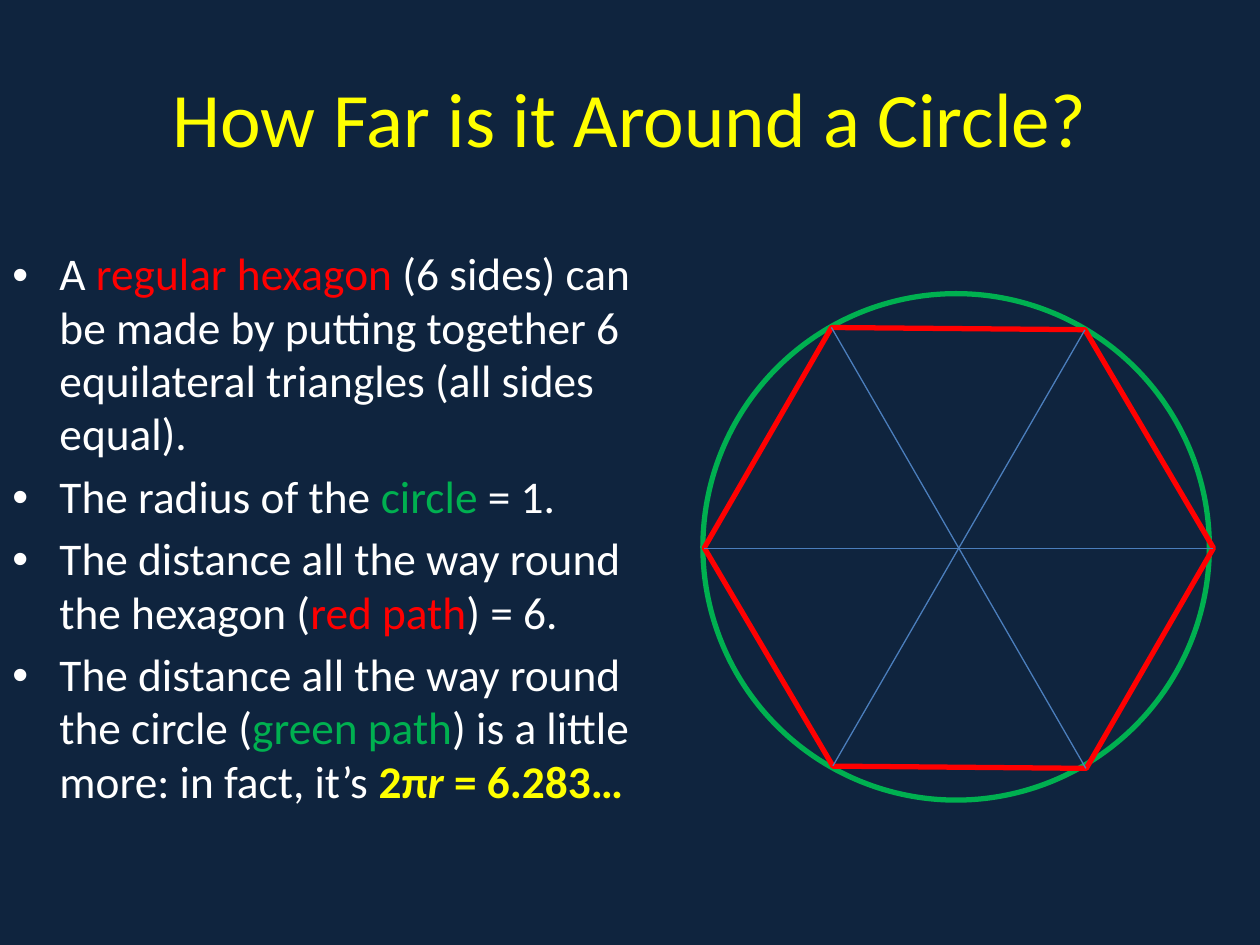
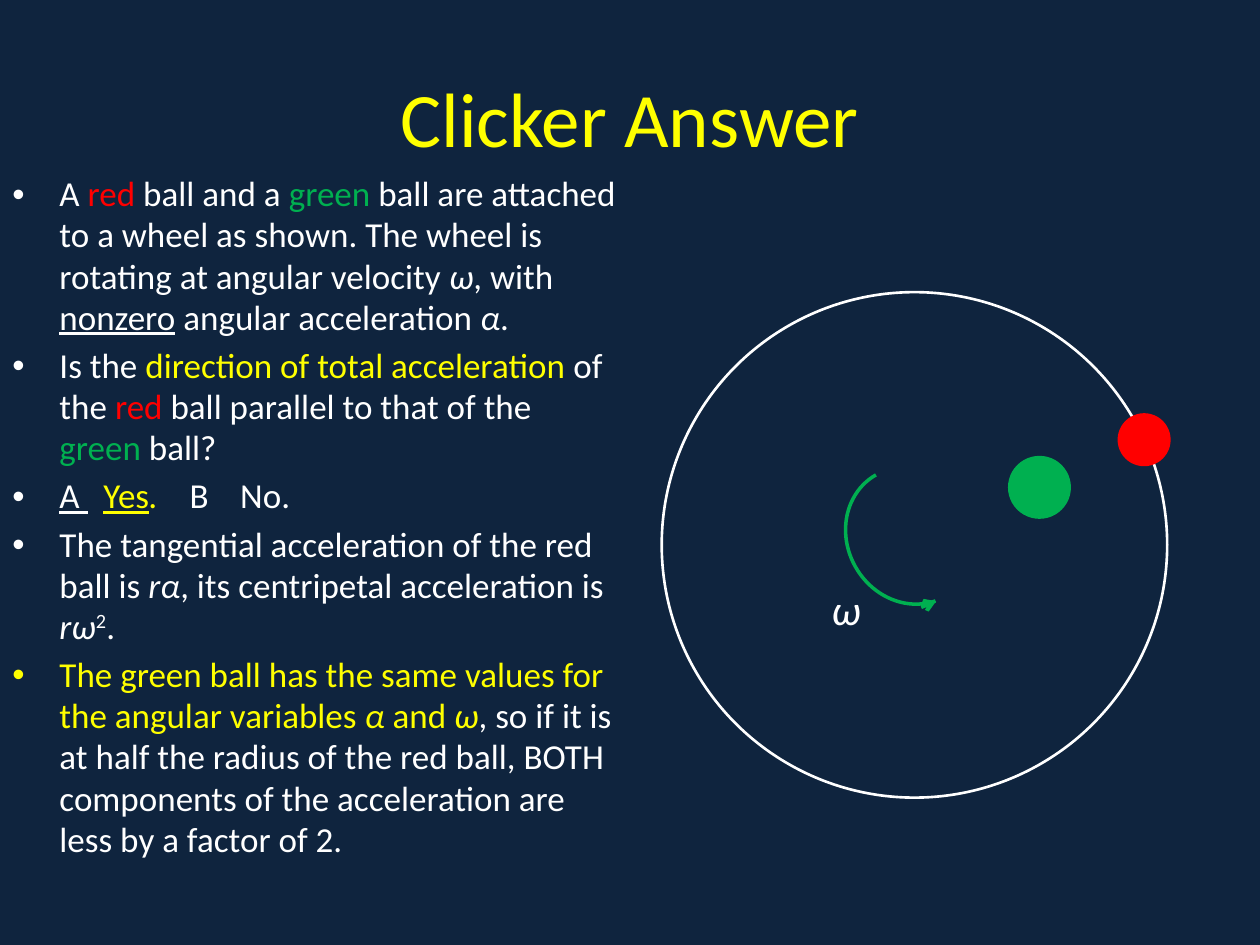
from lxml import etree
from pptx import Presentation, util as u
from pptx.dml.color import RGBColor
from pptx.enum import shapes, text
from pptx.oxml import ns

COLORS = {
    "night": "0F243E",
    "yellow": "FFFF00",
    "white": "FFFFFF",
    "red": "FF0000",
    "green": "00B050",
    "blue": "4B7EBC",
}
FONT = "Calibri"
FONT_STYLES = ("bold", "italic", "underline")
# Run attributes: raised text, and single spaces widened to a gap
RUN_ATTRIBUTES = {
    "super": {"baseline": "30000"},
    "gap": {"spc": "900"},
    "widegap": {"spc": "1350"},
}
BULLET_INDENT = u.Cm(0.95)

HEXAGON_POINTS = [
    [("A ", ""), ("regular hexagon ", "red"),
     ("(6 sides) can be made by putting together 6 equilateral triangles "
      "(all sides equal).", "")],
    [("The radius of the ", ""), ("circle", "green"), (" = 1.", "")],
    [("The distance all the way round the hexagon (", ""),
     ("red path", "red"), (") = 6.", "")],
    [("The distance all the way round the circle (", ""),
     ("green path", "green"), (") is a little more: in fact, it’s ", ""),
     ("2π", "yellow bold"), ("r", "yellow bold italic"),
     (" = 6.283…", "yellow bold")],
]

CLICKER_POINTS = [
    [("A ", ""), ("red", "red"), (" ball and a ", ""), ("green", "green"),
     (" ball are attached to a wheel as shown. The wheel is rotating at "
      "angular velocity ", ""), ("ω", "italic"), (", with ", ""),
     ("nonzero", "underline"), (" angular acceleration ", ""),
     ("α", "italic"), (".", "")],
    [("Is the ", ""), ("direction of total acceleration ", "yellow"),
     ("of the ", ""), ("red", "red"),
     (" ball parallel to that of the ", ""), ("green", "green"),
     (" ball?", "")],
    [("A", "underline"), (" ", "underline gap"), ("Yes", "yellow underline"),
     (".", "yellow italic"), (" ", "widegap"), ("B", ""), (" ", "widegap"),
     ("No.", "")],
    [("The tangential acceleration of the red ball is ", ""),
     ("rα", "italic"), (", its centripetal acceleration is ", ""),
     ("rω", "italic"), ("2", "super"), (".", "")],
    [("The green ball has the same values for the angular variables ",
      "yellow"), ("α", "yellow italic"), (" and ", "yellow"),
     ("ω", "yellow italic"),
     (", so if it is at half the radius of the red ball, BOTH components of "
      "the acceleration are less by a factor of 2.", "")],
]


def rgb(color):
    return RGBColor.from_string(COLORS[color])


def cm(*lengths):
    return [u.Cm(length) for length in lengths]


def add_run(paragraph, words, size, style=""):
    """Add words in a style such as "yellow bold"; white if no colour is named."""
    run = paragraph.add_run()
    run.text = words
    names = style.split()
    color = next((name for name in names if name in COLORS), "white")
    run.font.color.rgb = rgb(color)
    formats = {"name": FONT, "size": u.Pt(size)}
    formats.update((name, True) for name in names if name in FONT_STYLES)
    for attribute, value in formats.items():
        setattr(run.font, attribute, value)
    for name in names:
        for attribute, value in RUN_ATTRIBUTES.get(name, {}).items():
            run.font._element.set(attribute, value)


def add_text_frame(slide, box, anchor=text.MSO_ANCHOR.TOP):
    frame = slide.shapes.add_textbox(*cm(*box)).text_frame
    frame.word_wrap = True
    frame.vertical_anchor = anchor
    return frame


def add_bullet(paragraph, color):
    properties = paragraph._p.get_or_add_pPr()
    properties.set("marL", str(BULLET_INDENT))
    properties.set("indent", str(-BULLET_INDENT))
    bullet_color = etree.SubElement(properties, ns.qn("a:buClr"))
    etree.SubElement(bullet_color, ns.qn("a:srgbClr"), val=COLORS[color])
    etree.SubElement(properties, ns.qn("a:buFont"), typeface="Arial")
    etree.SubElement(properties, ns.qn("a:buChar"), char="•")


def add_points(slide, box, points, size):
    frame = add_text_frame(slide, box)
    for index, point in enumerate(points):
        paragraph = frame.add_paragraph() if index else frame.paragraphs[0]
        paragraph.line_spacing = 0.98
        paragraph.space_before = u.Pt(size * 0.2 if index else 0)
        first_style = point[0][1]
        add_bullet(paragraph, first_style if first_style in COLORS else "white")
        for words, style in point:
            add_run(paragraph, words, size, style)


def add_titled_slide(deck, title):
    slide = deck.slides.add_slide(deck.slide_layouts[6])
    slide.background.fill.solid()
    slide.background.fill.fore_color.rgb = rgb("night")
    frame = add_text_frame(slide, (1.27, 0.76, 22.86, 3.18),
                           text.MSO_ANCHOR.MIDDLE)
    heading = frame.paragraphs[0]
    heading.alignment = text.PP_ALIGN.CENTER
    add_run(heading, title, 44, "yellow")
    return slide


def add_outline(slide, kind, box, color, width, rotation=0, adjustments=()):
    outline = slide.shapes.add_shape(kind, *cm(*box))
    outline.shadow.inherit = False
    outline.fill.background()
    outline.line.color.rgb = rgb(color)
    outline.line.width = u.Pt(width)
    outline.rotation = rotation
    for index, value in enumerate(adjustments):
        outline.adjustments[index] = value


def add_ball(slide, left, top, diameter, color):
    ball = slide.shapes.add_shape(shapes.MSO_SHAPE.OVAL,
                                  *cm(left, top, diameter, diameter))
    ball.shadow.inherit = False
    ball.fill.solid()
    ball.fill.fore_color.rgb = rgb(color)
    ball.line.fill.background()


def add_line(slide, start, end, color, width, arrow=False):
    line = slide.shapes.add_connector(shapes.MSO_CONNECTOR.STRAIGHT,
                                      *cm(*start, *end))
    line.line.color.rgb = rgb(color)
    line.line.width = u.Pt(width)
    if arrow:
        etree.SubElement(line.line._get_or_add_ln(), ns.qn("a:tailEnd"),
                         type="arrow")
    etree.SubElement(line._element.spPr, ns.qn("a:effectLst"))


def add_hexagon_slide(deck):
    slide = add_titled_slide(deck, "How Far is it Around a Circle?")
    add_points(slide, (0, 4.88, 13.13, 13.54), HEXAGON_POINTS, 25.9)
    add_outline(slide, shapes.MSO_SHAPE.OVAL, (14.17, 5.92, 10.21, 10.21),
                "green", 3)
    add_outline(slide, shapes.MSO_SHAPE.HEXAGON, (14.25, 6.6, 10.16, 8.89),
                "red", 3, rotation=300, adjustments=(0.283, 1.155))
    diagonals = [((16.76, 6.6), (21.89, 15.49)),
                 ((21.87, 6.65), (16.79, 15.44)),
                 ((14.2, 11.05), (24.46, 11.05))]
    for start, end in diagonals:
        add_line(slide, start, end, "blue", 0.75)


def add_clicker_slide(deck):
    slide = add_titled_slide(deck, "Clicker Answer")
    add_points(slide, (0, 3.38, 12.7, 15.04), CLICKER_POINTS, 20)
    add_outline(slide, shapes.MSO_SHAPE.OVAL, (13.34, 5.89, 10.19, 10.19),
                "white", 1.5)
    omega = add_text_frame(slide, (16.51, 11.63, 2.18, 1.27))
    add_run(omega.paragraphs[0], "ω", 24, "italic")
    add_ball(slide, 22.53, 8.33, 1.07, "red")
    add_outline(slide, shapes.MSO_SHAPE.ARC, (16.94, 9.53, 2.82, 2.54),
                "green", 2, rotation=240.6, adjustments=(112.95, 0))
    add_line(slide, (18.57, 12.24), (18.87, 12.12), "green", 2.25, arrow=True)
    add_ball(slide, 20.32, 9.19, 1.27, "green")


def main():
    deck = Presentation()
    deck.slide_width, deck.slide_height = cm(25.4, 19.05)
    add_hexagon_slide(deck)
    add_clicker_slide(deck)
    deck.save("out.pptx")


if __name__ == "__main__":
    main()
